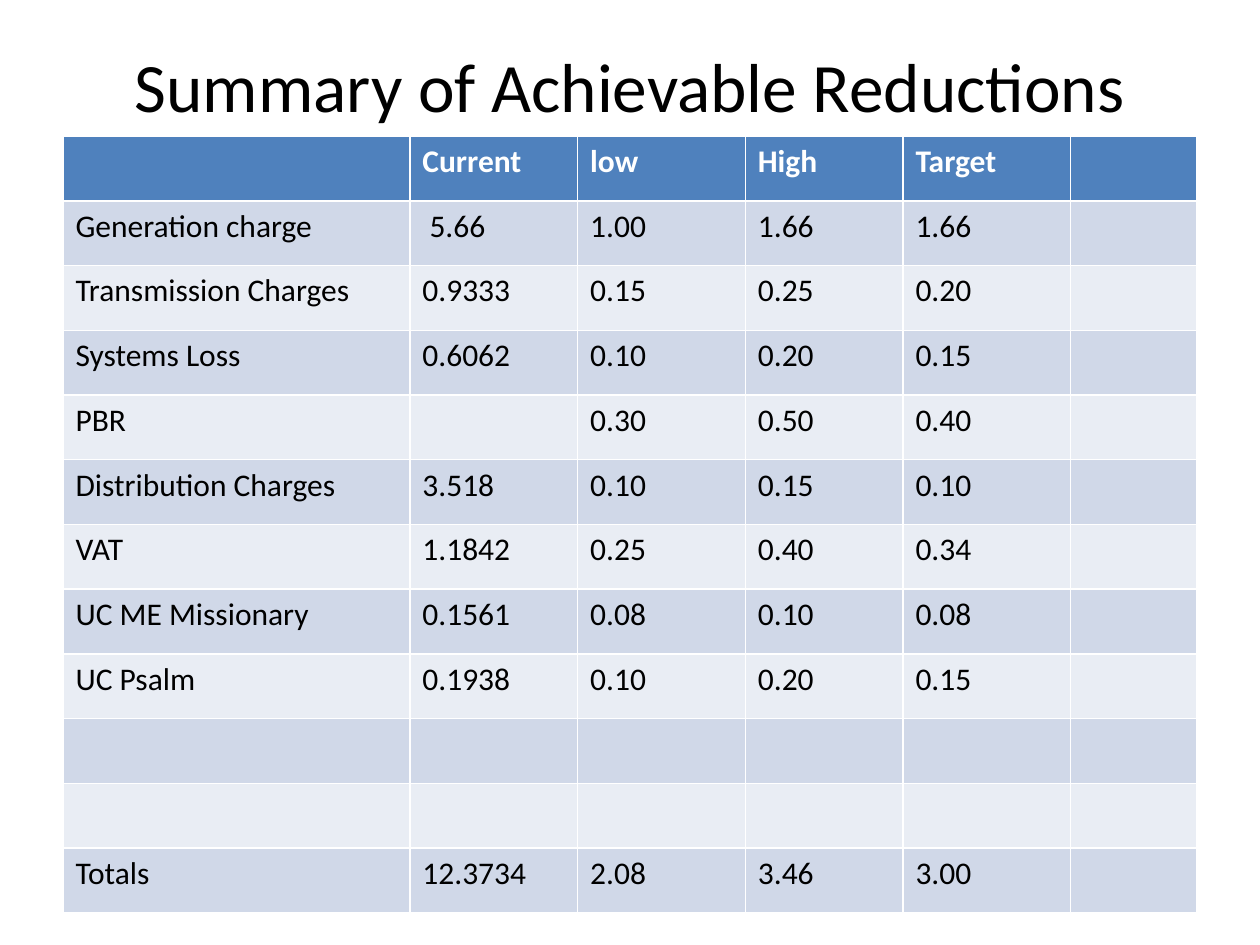
"""Build the slide that summarises achievable reductions in electricity charges."""
from pptx import Presentation
from pptx.dml.color import RGBColor
from pptx.enum.text import MSO_ANCHOR, PP_ALIGN
from pptx.util import Inches, Pt

BLACK = RGBColor(0x00, 0x00, 0x00)
WHITE = RGBColor(0xFF, 0xFF, 0xFF)
HEADER_BLUE = RGBColor(0x4F, 0x81, 0xBD)
BAND_DARK = RGBColor(0xD0, 0xD8, 0xE8)
BAND_LIGHT = RGBColor(0xE9, 0xED, 0xF4)

COLUMN_WIDTHS = (2.75, 1.33, 1.33, 1.25, 1.33, 1)
CHARGES = (
    ("", "Current", "low", "High", "Target", ""),
    ("Generation charge", " 5.66", "1.00", "1.66", "1.66", ""),
    ("Transmission Charges", "0.9333", "0.15", "0.25", "0.20", ""),
    ("Systems Loss", "0.6062", "0.10", "0.20", "0.15", ""),
    ("PBR", "", "0.30", "0.50", "0.40", ""),
    ("Distribution Charges", "3.518", "0.10", "0.15", "0.10", ""),
    ("VAT", "1.1842", "0.25", "0.40", "0.34", ""),
    ("UC ME Missionary", "0.1561", "0.08", "0.10", "0.08", ""),
    ("UC Psalm", "0.1938", "0.10", "0.20", "0.15", ""),
    ("",) * 6,
    ("",) * 6,
    ("Totals", "12.3734", "2.08", "3.46", "3.00", ""),
)


class SlideBuilder:
    font_name = "Calibri"
    title_size = Pt(39.6)
    table_size = Pt(18)

    def __init__(self, presentation):
        self.width = presentation.slide_width
        self.height = presentation.slide_height
        self.slide = presentation.slides.add_slide(presentation.slide_layouts[5])

    def box(self, left, top, width, height):
        return (int(left * self.width), int(top * self.height),
                int(width * self.width), int(height * self.height))

    def style(self, paragraph, size, color, bold=False):
        font = paragraph.font
        font.name, font.size, font.bold = self.font_name, size, bold
        font.color.rgb = color

    def title(self, text, *shares):
        shape = self.slide.shapes.title
        shape.left, shape.top, shape.width, shape.height = self.box(*shares)
        shape.text_frame.text = text
        shape.text_frame.vertical_anchor = MSO_ANCHOR.MIDDLE
        paragraph = shape.text_frame.paragraphs[0]
        paragraph.alignment = PP_ALIGN.CENTER
        self.style(paragraph, self.title_size, BLACK)

    def table(self, rows, column_widths, *shares):
        left, top, width, height = self.box(*shares)
        table = self.slide.shapes.add_table(
            len(rows), len(column_widths), left, top, width, height).table
        for column, share in zip(table.columns, column_widths):
            column.width = int(width * share / sum(column_widths))
        for row_index, values in enumerate(rows):
            header = row_index == 0
            band = BAND_DARK if row_index % 2 else BAND_LIGHT
            for column_index, value in enumerate(values):
                cell = table.cell(row_index, column_index)
                cell.fill.solid()
                cell.fill.fore_color.rgb = HEADER_BLUE if header else band
                cell.text = value
                self.style(cell.text_frame.paragraphs[0], self.table_size,
                           WHITE if header else BLACK, header)


def main():
    presentation = Presentation()
    presentation.slide_width = Inches(10)
    presentation.slide_height = Inches(7.5)
    builder = SlideBuilder(presentation)
    builder.title("Summary of Achievable Reductions", 0.05, 0.04, 0.9, 0.1)
    builder.table(CHARGES, COLUMN_WIDTHS, 0.05, 1.08 / 7.5, 0.9, 6.17 / 7.5)
    presentation.save("out.pptx")


if __name__ == "__main__":
    main()
